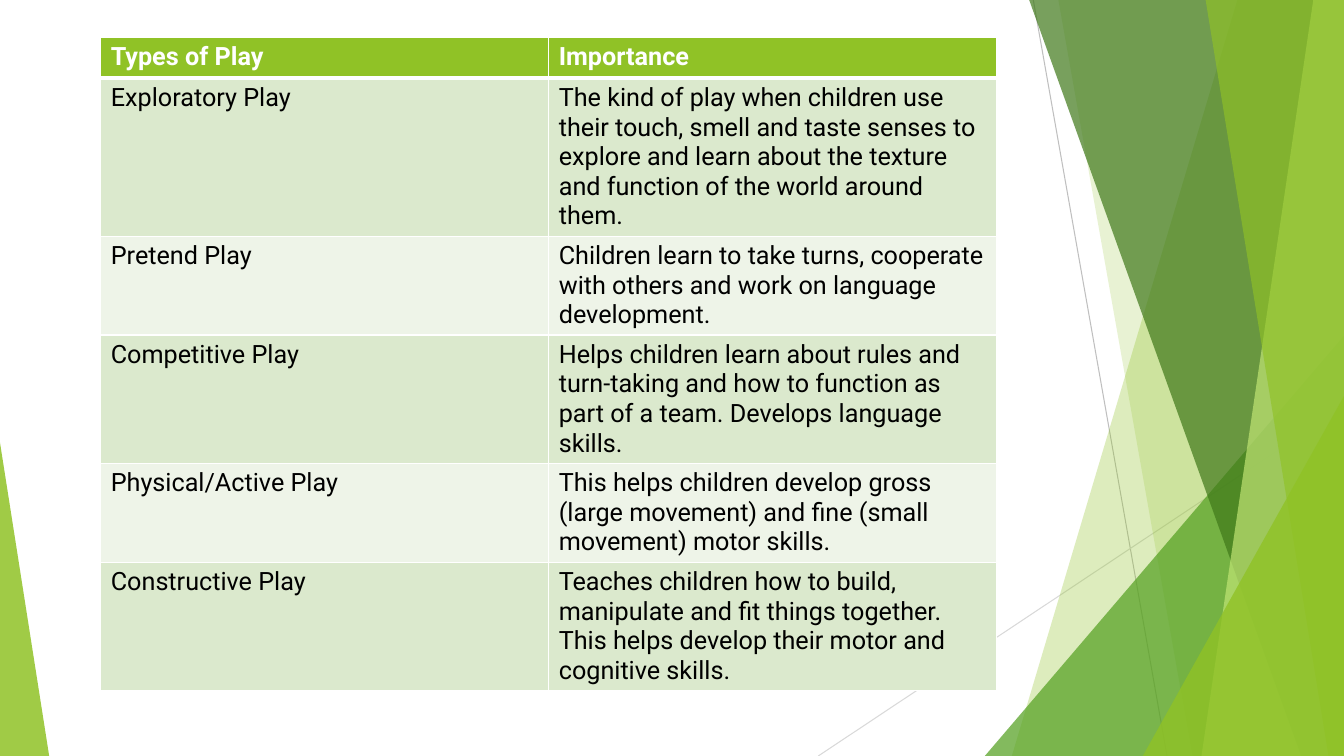
from dataclasses import dataclass

from lxml import etree
from pptx import Presentation
from pptx.dml.color import RGBColor
from pptx.enum import shapes as kinds
from pptx.oxml import ns
from pptx.util import Cm, Pt

COLOURS = {
    "lime": "90C226", "leaf": "54A021", "forest": "3F7819", "pale": "C0E474",
    "grey": "BFBFBF", "light grey": "D9D9D9", "white": "FFFFFF", "black": "000000",
    "odd row": "DBE9CD", "even row": "EEF4E8",
}
WIDTH, HEIGHT, BAND_TOP = 33.87, 19.05, -0.02


@dataclass
class Ray:
    start: tuple[float, float]
    end: tuple[float, float]
    colour: str


@dataclass
class Band:
    """Area from a slanted left side to the right edge of the slide."""
    top_left: float
    bottom_left: float
    colour: str
    opacity: int


@dataclass
class Peak:
    """Right triangle that stands on the bottom edge of the slide."""
    left: float
    top: float
    width: float
    tip: float
    colour: str
    opacity: int


RAYS = [
    Ray((26.04, 0), (29.41, HEIGHT), "grey"),
    Ray((WIDTH, 10.24), (20.62, HEIGHT), "light grey"),
]
FACETS = [
    Band(31.19, 25.5, "lime", 30),
    Band(26.67, 30.05, "lime", 20),
    Peak(24.82, 8.46, 9.05, 1, "leaf", 72),
    Band(25.93, 32.79, "forest", 70),
    Band(33.1, 30.28, "pale", 70),
    Band(30.38, 33.48, "lime", 65),
    Peak(28.8, 9.98, 5.07, 1, "lime", 80),
    Peak(0, 11.15, 1.24, 0, "lime", 85),
]
PLAY_TYPES = [
    ("Types of Play", "Importance"),
    ("Exploratory Play", "The kind of play when children use their touch, smell and taste "
     "senses to explore and learn about the texture and function of the world around them."),
    ("Pretend Play", "Children learn to take turns, cooperate with others and work on "
     "language development."),
    ("Competitive Play", "Helps children learn about rules and turn-taking and how to "
     "function as part of a team. Develops language skills."),
    ("Physical/Active Play", "This helps children develop gross (large movement) and fine "
     "(small movement) motor skills."),
    ("Constructive Play", "Teaches children how to build, manipulate and fit things "
     "together. This helps develop their motor and cognitive skills."),
]


def rgb(name: str) -> RGBColor:
    return RGBColor.from_string(COLOURS[name])


def draw_ray(slide, ray: Ray) -> None:
    line = slide.shapes.add_connector(
        kinds.MSO_CONNECTOR.STRAIGHT, *map(Cm, ray.start + ray.end))
    line.line.color.rgb = rgb(ray.colour)
    line.line.width = Pt(0.75)
    etree.SubElement(line._element.spPr, ns.qn("a:effectLst"))


def draw_facet(slide, facet: Band | Peak) -> None:
    if isinstance(facet, Band):
        outline = slide.shapes.build_freeform(Cm(facet.top_left), Cm(BAND_TOP))
        corners = [(WIDTH, BAND_TOP), (WIDTH, HEIGHT), (facet.bottom_left, HEIGHT)]
        outline.add_line_segments([(Cm(x), Cm(y)) for x, y in corners], close=True)
        shape = outline.convert_to_shape()
    else:
        shape = slide.shapes.add_shape(
            kinds.MSO_SHAPE.ISOSCELES_TRIANGLE, Cm(facet.left), Cm(facet.top),
            Cm(facet.width), Cm(HEIGHT - facet.top))
        shape.adjustments[0] = facet.tip
    shape.shadow.inherit = False
    shape.line.fill.background()
    shape.fill.solid()
    shape.fill.fore_color.rgb = rgb(facet.colour)
    colour = shape._element.spPr.find(".//" + ns.qn("a:srgbClr"))
    etree.SubElement(colour, ns.qn("a:alpha"), val=str(facet.opacity * 1000))


def add_borders(cell, top: float, bottom: float) -> None:
    properties = cell._tc.get_or_add_tcPr()
    for side, points in {"L": 1, "R": 1, "T": top, "B": bottom}.items():
        border = etree.SubElement(properties, ns.qn(f"a:ln{side}"), w=str(Pt(points)))
        fill = etree.SubElement(border, ns.qn("a:solidFill"))
        etree.SubElement(fill, ns.qn("a:srgbClr"), val=COLOURS["white"])


def format_cell(cell, wording: str, row: int) -> None:
    header = row == 0
    add_borders(cell, top=3 if row == 1 else 1, bottom=3 if header else 1)
    cell.fill.solid()
    cell.fill.fore_color.rgb = rgb("lime" if header else "odd row" if row % 2 else "even row")
    cell.text = wording
    font = cell.text_frame.paragraphs[0].runs[0].font
    for name, value in {"name": "Roboto", "size": Pt(18), "bold": header}.items():
        setattr(font, name, value)
    font.color.rgb = rgb("white" if header else "black")


def draw_play_table(slide) -> None:
    frame = slide.shapes.add_table(
        len(PLAY_TYPES), 2, Cm(2.54), Cm(0.94), Cm(22.58), Cm(16.79))
    for row, wordings in enumerate(PLAY_TYPES):
        frame.table.rows[row].height = Cm(1.03)
        for column, wording in enumerate(wordings):
            format_cell(frame.table.cell(row, column), wording, row)
    frame.height = Cm(16.79)


def main() -> None:
    deck = Presentation()
    deck.slide_width, deck.slide_height = Cm(WIDTH), Cm(HEIGHT)
    slide = deck.slides.add_slide(deck.slide_layouts[6])
    for ray in RAYS:
        draw_ray(slide, ray)
    for facet in FACETS:
        draw_facet(slide, facet)
    draw_play_table(slide)
    deck.save("out.pptx")


if __name__ == "__main__":
    main()
